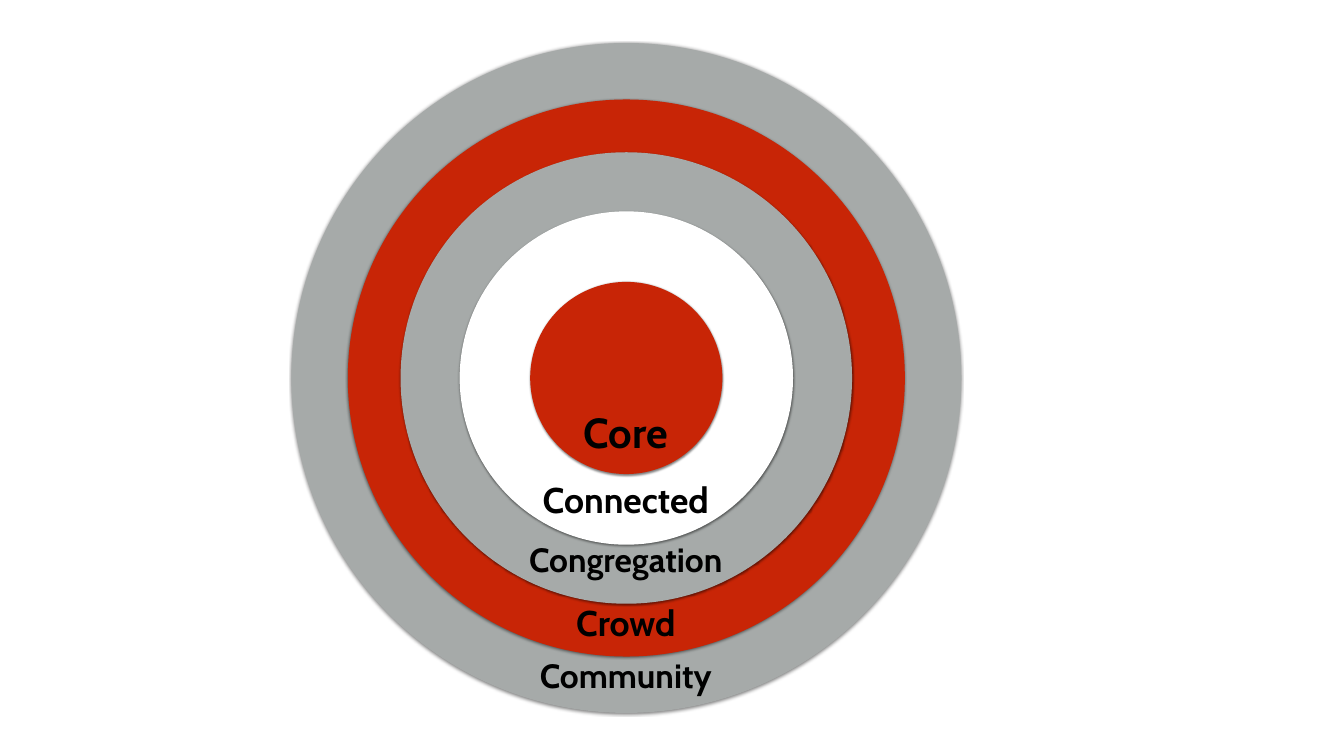
import pptx
import pptx.util
import pptx.dml.color
import pptx.enum.shapes
import pptx.enum.text
import pptx.oxml
import pptx.oxml.ns

Pt = pptx.util.Pt
RGB = pptx.dml.color.RGBColor.from_string
COLORS = {"grey": "A6AAA9", "red": "C82506", "white": "FFFFFF", "black": "000000"}
CENTER_X, CENTER_Y = 596.5, 360
LABEL_CENTER_X = 596

# diameter, fill; from the outermost circle inwards
CIRCLES = [(638, "grey"), (530.5, "red"), (430, "grey"), (317.5, "white"), (183, "red")]
# wording, vertical centre, width, height, font size
LABELS = [
    ("Core", 411, 107, 60, 40),
    ("Connected", 475, 189, 52, 34),
    ("Congregation", 532, 219, 49, 32),
    ("Community", 643, 192, 49, 32),
    ("Crowd", 593, 121, 52, 34),
]
SHADOW = (
    f'<a:outerShdw {pptx.oxml.ns.nsdecls("a")} blurRad="{Pt(2)}" dist="{Pt(1)}" '
    f'dir="5400000" rotWithShape="0"><a:srgbClr val="{COLORS["black"]}">'
    '<a:alpha val="50000"/></a:srgbClr></a:outerShdw>'
)
FRAME_FORMAT = {
    "margin_left": Pt(3), "margin_right": Pt(3), "margin_top": Pt(3), "margin_bottom": Pt(3),
    "vertical_anchor": pptx.enum.text.MSO_ANCHOR.MIDDLE, "word_wrap": False,
}

deck = pptx.Presentation()
deck.slide_width, deck.slide_height = Pt(1280), Pt(720)
page = deck.slides.add_slide(deck.slide_layouts[6])
page.background.fill.solid()
page.background.fill.fore_color.rgb = RGB(COLORS["white"])
target = page.shapes.add_group_shape()

for diameter, color in CIRCLES:
    circle = target.shapes.add_shape(
        pptx.enum.shapes.MSO_SHAPE.OVAL,
        Pt(CENTER_X - diameter / 2), Pt(CENTER_Y - diameter / 2), Pt(diameter), Pt(diameter))
    circle.fill.solid()
    circle.fill.fore_color.rgb = RGB(COLORS[color])
    circle.line.fill.background()
    circle.shadow.inherit = False
    effects = circle.element.spPr.find(pptx.oxml.ns.qn("a:effectLst"))
    effects.append(pptx.oxml.parse_xml(SHADOW))

for wording, center_y, width, height, size in LABELS:
    box = target.shapes.add_textbox(
        Pt(LABEL_CENTER_X - width / 2), Pt(center_y - height / 2), Pt(width), Pt(height))
    for name, value in FRAME_FORMAT.items():
        setattr(box.text_frame, name, value)
    para = box.text_frame.paragraphs[0]
    para.alignment = pptx.enum.text.PP_ALIGN.CENTER
    span = para.add_run()
    span.text = wording
    for name, value in {"name": "Cabin", "size": Pt(size), "bold": True}.items():
        setattr(span.font, name, value)
    span.font.color.rgb = RGB(COLORS["black"])

deck.save("out.pptx")
